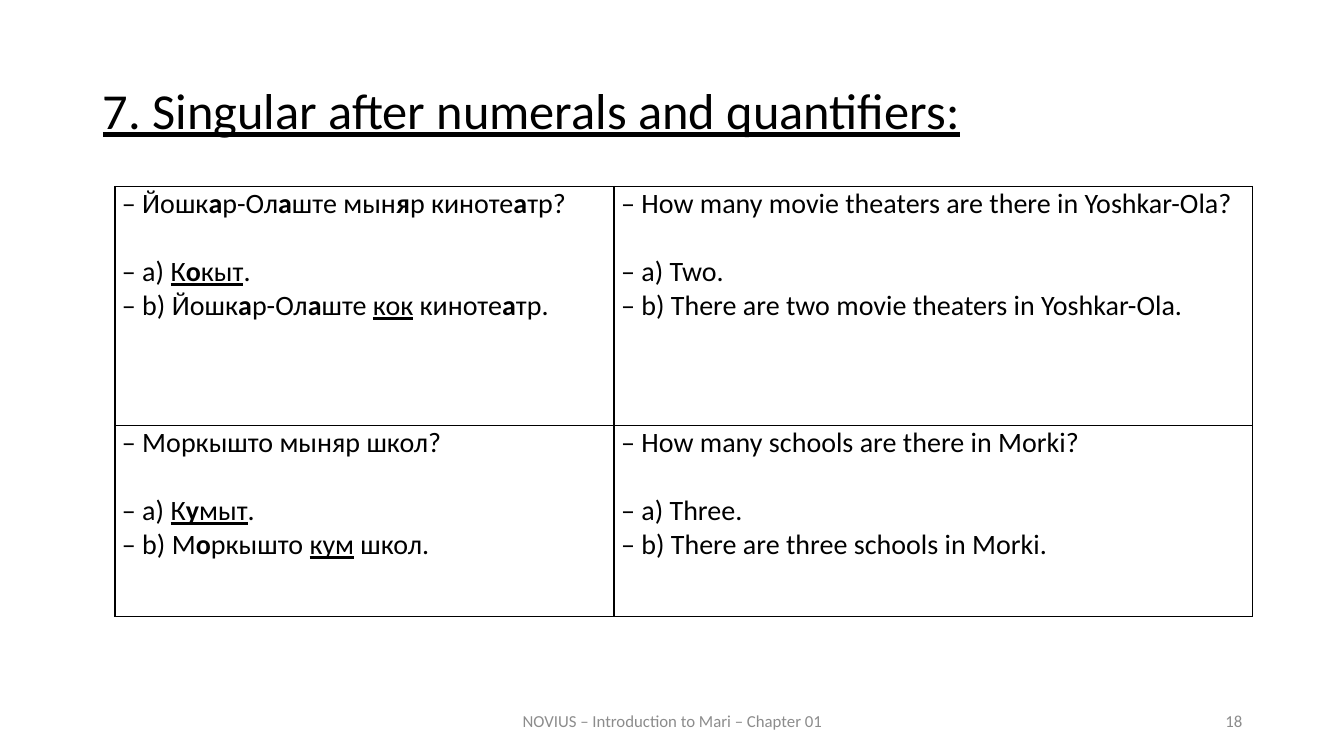
from dataclasses import dataclass
from lxml.etree import SubElement
from pptx import Presentation
from pptx.dml.color import RGBColor
from pptx.enum.text import MSO_ANCHOR as Anchor, MSO_AUTO_SIZE as AutoSize, PP_ALIGN as Align
from pptx.oxml.ns import qn
from pptx.util import Inches, Pt

TITLE = "7. Singular after numerals and quantifiers:"
FOOTER = "NOVIUS – Introduction to Mari – Chapter 01"
PAGE = "18"

# *bold* and _underlined_ spans
DIALOGUES = [
    (
        ["– Йошк*а*р-Ол*а*ште мын*я*р киноте*а*тр?",
         "– a) _К*о*кыт_.",
         "– b) Йошк*а*р-Ол*а*ште _кок_ киноте*а*тр."],
        ["– How many movie theaters are there in Yoshkar-Ola?",
         "– a) Two.",
         "– b) There are two movie theaters in Yoshkar-Ola."],
    ),
    (
        ["– Моркышто мыняр школ?",
         "– a) _К*у*мыт_.",
         "– b) М*о*ркышто _кум_ школ."],
        ["– How many schools are there in Morki?",
         "– a) Three.",
         "– b) There are three schools in Morki."],
    ),
]
COLUMN_WIDTHS = [4.95, 6.33]
ROW_HEIGHTS = [2.37, 1.9]
COLUMN_ALIGNS = [Align.JUSTIFY, Align.LEFT]


@dataclass(frozen=True)
class Theme:
    font: str = "Calibri"
    ink: str = "000000"
    muted: str = "8C8C8C"
    title_size: float = 36
    body_size: float = 20
    footer_size: float = 12
    answer_gap: float = 24.4
    border: float = 1


THEME = Theme()


def add_run(paragraph, text, size, color, bold=False, underline=False):
    run = paragraph.add_run()
    run.text = text
    font = run.font
    font.name, font.size = THEME.font, Pt(size)
    font.color.rgb = RGBColor.from_string(color)
    font.bold, font.underline = bold, underline


def add_marked_text(paragraph, line):
    for u, span in enumerate(line.split("_")):
        for b, piece in enumerate(span.split("*")):
            if piece:
                add_run(paragraph, piece, THEME.body_size, THEME.ink, b % 2 == 1, u % 2 == 1)


def add_borders(cell):
    properties = cell._tc.get_or_add_tcPr()
    for position, side in enumerate(("a:lnL", "a:lnR", "a:lnT", "a:lnB")):
        line = SubElement(properties, qn(side), w=str(Pt(THEME.border)))
        fill = SubElement(line, qn("a:solidFill"))
        SubElement(fill, qn("a:srgbClr"), val=THEME.ink)
        properties.insert(position, line)


def fill_cell(cell, lines, align):
    cell.fill.background()
    add_borders(cell)
    cell.margin_left = cell.margin_right = Inches(0.07)
    cell.margin_top = cell.margin_bottom = 0
    frame = cell.text_frame
    for index, line in enumerate(lines):
        paragraph = frame.add_paragraph() if index else frame.paragraphs[0]
        paragraph.alignment = align
        if index == 1:
            paragraph.space_before = Pt(THEME.answer_gap)
        add_marked_text(paragraph, line)


def add_title(slide):
    title = slide.shapes.title
    title.left, title.top, title.width, title.height = map(Inches, (0.92, 0.4, 11.5, 1.45))
    frame = title.text_frame
    frame.auto_size, frame.vertical_anchor = AutoSize.NONE, Anchor.MIDDLE
    paragraph = frame.paragraphs[0]
    paragraph.alignment, paragraph.line_spacing = Align.JUSTIFY, 0.9
    paragraph.space_before = Pt(18)
    add_run(paragraph, TITLE, THEME.title_size, THEME.ink, underline=True)


def add_dialogues(slide):
    frame = slide.shapes.add_table(
        len(DIALOGUES), len(COLUMN_WIDTHS), Inches(1.14), Inches(1.85),
        Inches(sum(COLUMN_WIDTHS)), Inches(sum(ROW_HEIGHTS)))
    table = frame.table
    table.first_row = table.horz_banding = False
    for column, width in zip(table.columns, COLUMN_WIDTHS):
        column.width = Inches(width)
    for row, height, languages in zip(table.rows, ROW_HEIGHTS, DIALOGUES):
        row.height = Inches(height)
        for cell, lines, align in zip(row.cells, languages, COLUMN_ALIGNS):
            fill_cell(cell, lines, align)


def add_footer(slide, text, left, width, align):
    box = slide.shapes.add_textbox(Inches(left), Inches(6.95), Inches(width), Inches(0.4))
    frame = box.text_frame
    frame.word_wrap, frame.vertical_anchor = True, Anchor.MIDDLE
    paragraph = frame.paragraphs[0]
    paragraph.alignment = align
    add_run(paragraph, text, THEME.footer_size, THEME.muted)


def main():
    deck = Presentation()
    deck.slide_width, deck.slide_height = Inches(13.33), Inches(7.5)
    slide = deck.slides.add_slide(deck.slide_layouts[5])
    add_title(slide)
    add_footer(slide, FOOTER, 4.42, 4.5, Align.CENTER)
    add_footer(slide, PAGE, 9.42, 3, Align.RIGHT)
    add_dialogues(slide)
    deck.save("out.pptx")


if __name__ == "__main__":
    main()
